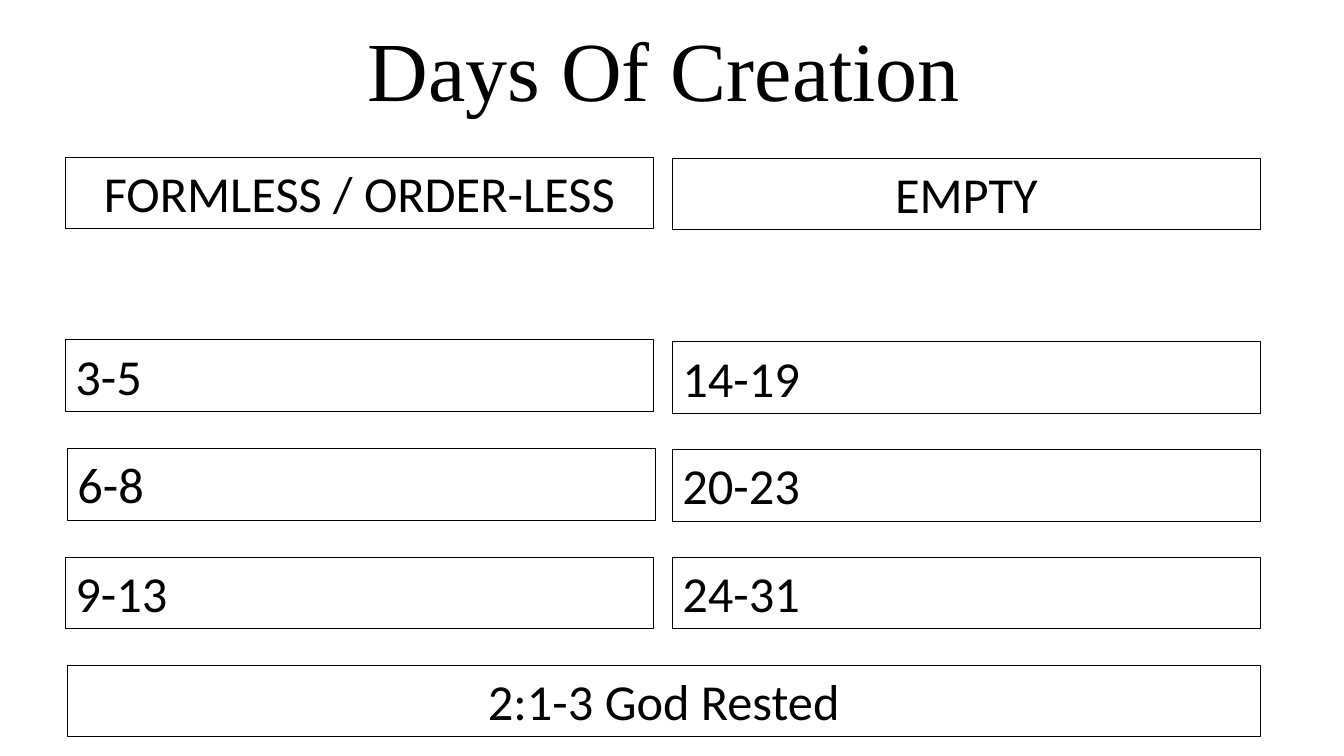
import pptx
import pptx.dml.color
import pptx.enum.shapes
import pptx.enum.text
import pptx.util

PX = 9144  # EMU per px, 100 px to the inch
COLORS = {"ink": "000000", "paper": "FFFFFF"}
LEFT, RIGHT = 65, 667
COLUMN_WIDTH, BOX_HEIGHT = 583, 71
REST_LEFT, REST_WIDTH = 67, 1183

HEADINGS = [
    ("FORMLESS / ORDER-LESS", LEFT, 156),
    ("EMPTY", RIGHT, 157),
]
VERSES = [
    ("3-5", LEFT, 337),
    ("6-8", LEFT + 2, 445),
    ("9-13", LEFT, 553),
    ("14-19", RIGHT, 339),
    ("20-23", RIGHT, 446),
    ("24-31", RIGHT, 553),
]
ALIGN = pptx.enum.text.PP_ALIGN


def rgb(name):
    return pptx.dml.color.RGBColor.from_string(COLORS[name])


def write(shape, text, font_name, size, alignment):
    frame = shape.text_frame
    frame.word_wrap = True
    frame.auto_size = pptx.enum.text.MSO_AUTO_SIZE.SHAPE_TO_FIT_TEXT
    frame.vertical_anchor = pptx.enum.text.MSO_ANCHOR.TOP
    paragraph = frame.paragraphs[0]
    paragraph.alignment = alignment
    paragraph.line_spacing = 1.0
    paragraph.space_before = pptx.util.Pt(0)
    run = paragraph.add_run()
    run.text = text
    run.font.name = font_name
    run.font.size = pptx.util.Pt(size)
    run.font.color.rgb = rgb("ink")


def add_title(slide, text):
    title = slide.shapes.title
    title.left, title.top = 168 * PX, 12 * PX
    title.width, title.height = 981 * PX, 111 * PX
    write(title, text, "Times New Roman", 60, ALIGN.CENTER)


def add_box(slide, text, left, top, width=COLUMN_WIDTH, alignment=ALIGN.LEFT):
    box = slide.shapes.add_shape(
        pptx.enum.shapes.MSO_SHAPE.RECTANGLE,
        left * PX, top * PX, width * PX, BOX_HEIGHT * PX)
    box.shadow.inherit = False
    box.fill.background()
    box.line.color.rgb = rgb("ink")
    box.line.width = pptx.util.Pt(0.75)
    write(box, text, "Calibri", 36, alignment)


def main():
    presentation = pptx.Presentation()
    presentation.slide_width = pptx.util.Inches(13.33)
    presentation.slide_height = pptx.util.Inches(7.5)
    slide = presentation.slides.add_slide(presentation.slide_layouts[5])
    slide.background.fill.solid()
    slide.background.fill.fore_color.rgb = rgb("paper")

    add_title(slide, "Days Of Creation")
    for text, left, top in HEADINGS:
        add_box(slide, text, left, top, alignment=ALIGN.CENTER)
    for text, left, top in VERSES:
        add_box(slide, text, left, top)
    add_box(slide, "2:1-3 God Rested", REST_LEFT, 660, REST_WIDTH, ALIGN.CENTER)

    presentation.save("out.pptx")


if __name__ == "__main__":
    main()
